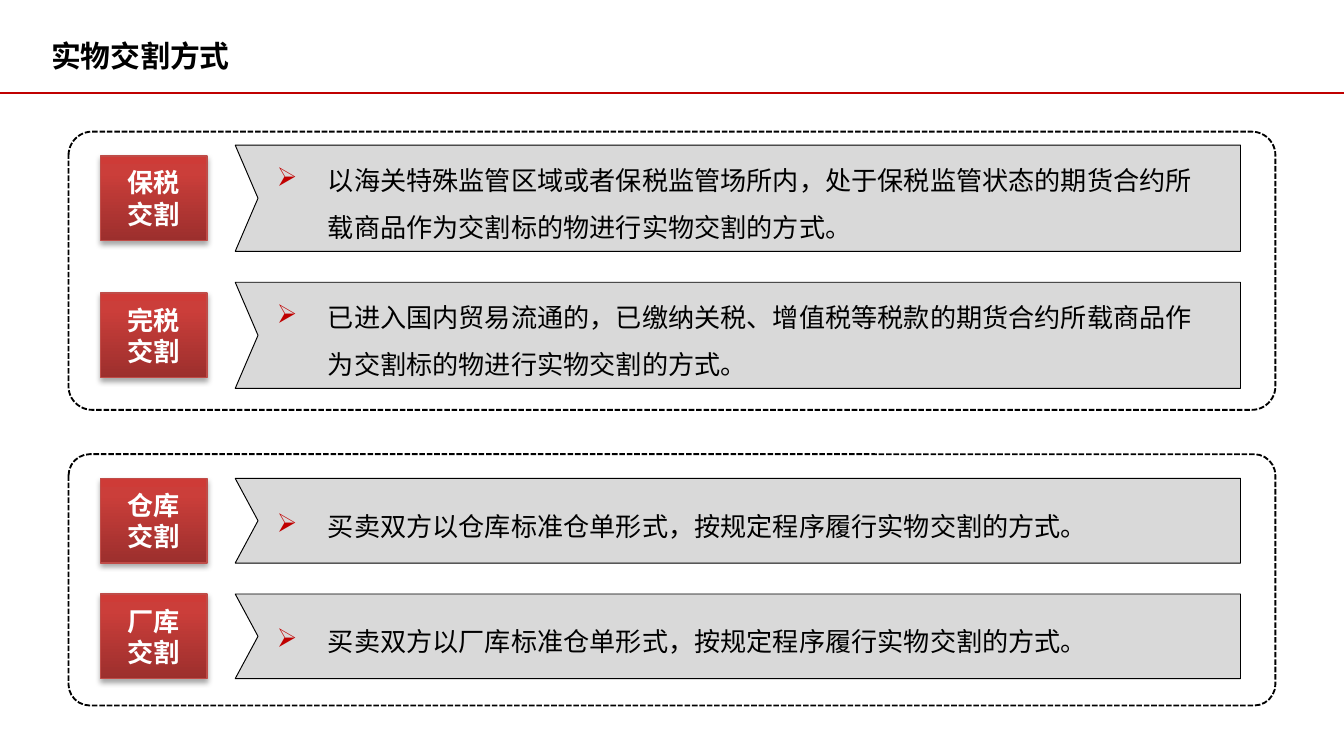
from collections import namedtuple
from copy import deepcopy

from lxml import etree
from pptx import Presentation
from pptx import util as u
from pptx.dml.color import RGBColor
from pptx.enum import dml, shapes, text
from pptx.oxml.ns import qn

Box = namedtuple("Box", "left top width height")

WIDTH = 10
HEIGHT = WIDTH * 9 / 16
FONT = "Noto Sans CJK SC"
BLACK = RGBColor(0, 0, 0)
WHITE = RGBColor(255, 255, 255)
RED = RGBColor(0xC0, 0, 0)
GREY = RGBColor(0xD9, 0xD9, 0xD9)
BADGE_EDGE = RGBColor(0xBF, 0x4C, 0x48)
BADGE_STOPS = [
    (0, RGBColor(0x9C, 0x2F, 0x2D)),
    (0.8, RGBColor(0xCB, 0x3E, 0x3A)),
    (1, RGBColor(0xCE, 0x3B, 0x37)),
]

# Columns inside a panel, as offsets from its left edge
BADGE_LEFT, BADGE_WIDTH = 0.24, 0.79
BANNER_LEFT, BANNER_WIDTH = 1.24, 7.48
BADGE_HEIGHT = 0.63
ROW_GAP = 0.23
NOTCH = 0.17

# Panel box, space above the first row, row height, rows
PANELS = [
    (Box(0.51, 0.98, 8.98, 2.07), 0.10, 0.79, [
        ("保税", "以海关特殊监管区域或者保税监管场所内，处于保税监管状态的期货合约所"
                 "载商品作为交割标的物进行实物交割的方式。"),
        ("完税", "已进入国内贸易流通的，已缴纳关税、增值税等税款的期货合约所载商品作"
                 "为交割标的物进行实物交割的方式。"),
    ]),
    (Box(0.51, 3.38, 8.98, 1.87), 0.18, 0.63, [
        ("仓库", "买卖双方以仓库标准仓单形式，按规定程序履行实物交割的方式。"),
        ("厂库", "买卖双方以厂库标准仓单形式，按规定程序履行实物交割的方式。"),
    ]),
]


def inches(box):
    return [u.Inches(length) for length in box]


def add_child(parent, tag, **attributes):
    return etree.SubElement(parent, qn(tag), attributes)


def format_runs(frame, size, color, bold=False):
    for paragraph in frame.paragraphs:
        for run in paragraph.runs:
            run.font.size = u.Pt(size)
            run.font.bold = bold
            run.font.name = FONT
            run.font.color.rgb = color
            add_child(run.font._element, "a:ea", typeface=FONT)


def outline(shape, color, width):
    shape.line.color.rgb = color
    shape.line.width = u.Pt(width)


def add_header(slide, box):
    title = slide.shapes.title
    title.left, title.top, title.width, title.height = inches(box)
    frame = title.text_frame
    frame.text = "实物交割方式"
    frame.vertical_anchor = text.MSO_ANCHOR.MIDDLE
    frame.paragraphs[0].alignment = text.PP_ALIGN.LEFT
    format_runs(frame, 16, BLACK, bold=True)

    rule_y = u.Inches(box.top + box.height)
    rule = slide.shapes.add_connector(
        shapes.MSO_CONNECTOR.STRAIGHT, 0, rule_y, u.Inches(WIDTH), rule_y)
    outline(rule, RED, 1)
    add_child(rule._element.spPr, "a:effectLst")


def fill_badge(badge):
    """Apply the three-stop vertical gradient and the soft shadow below."""
    badge.fill.gradient()
    badge.fill.gradient_angle = 90
    properties = badge._element.spPr
    stop_list = properties.find(qn("a:gradFill")).find(qn("a:gsLst"))
    stop_list.append(deepcopy(stop_list[-1]))
    for stop, (position, color) in zip(badge.fill.gradient_stops, BADGE_STOPS):
        stop.position = position
        stop.color.rgb = color

    badge.shadow.inherit = False
    shadow = add_child(
        properties.find(qn("a:effectLst")), "a:outerShdw",
        blurRad=str(u.Pt(3.1)), dist=str(u.Pt(1.8)), dir="5400000", rotWithShape="0")
    shadow_color = add_child(shadow, "a:srgbClr", val=str(BLACK))
    add_child(shadow_color, "a:alpha", val="35000")


def add_badge(slide, box, kind):
    badge = slide.shapes.add_shape(shapes.MSO_SHAPE.RECTANGLE, *inches(box))
    outline(badge, BADGE_EDGE, 0.75)
    fill_badge(badge)
    frame = badge.text_frame
    frame.text = f"{kind}\n交割"
    frame.vertical_anchor = text.MSO_ANCHOR.MIDDLE
    for paragraph in frame.paragraphs:
        paragraph.alignment = text.PP_ALIGN.CENTER
    format_runs(frame, 14, WHITE, bold=True)


def add_bullet(paragraph):
    properties = paragraph._p.get_or_add_pPr()
    properties.set("marL", str(u.Inches(0.38)))
    properties.set("indent", str(-u.Inches(0.38)))
    add_child(add_child(properties, "a:buClr"), "a:srgbClr", val=str(RED))
    add_child(properties, "a:buChar", char="➢")


def add_banner(slide, box, definition):
    """Add the notched grey banner that holds one definition."""
    right, bottom = box.left + box.width, box.top + box.height
    builder = slide.shapes.build_freeform(
        u.Inches(right), u.Inches(box.top))
    corners = [
        (box.left, box.top),
        (box.left + NOTCH, box.top + box.height / 2),
        (box.left, bottom),
        (right, bottom),
    ]
    builder.add_line_segments([inches(corner) for corner in corners], close=True)
    banner = builder.convert_to_shape()
    banner.shadow.inherit = False
    banner.fill.solid()
    banner.fill.fore_color.rgb = GREY
    outline(banner, BLACK, 0.5)

    frame = banner.text_frame
    frame.text = definition
    frame.word_wrap = True
    frame.vertical_anchor = text.MSO_ANCHOR.MIDDLE
    frame.margin_left = frame.margin_right = u.Inches(0.31)
    frame.margin_top, frame.margin_bottom = u.Inches(0.08), u.Inches(0.12)
    paragraph = frame.paragraphs[0]
    paragraph.alignment = text.PP_ALIGN.LEFT
    paragraph.line_spacing = 1.5
    add_bullet(paragraph)
    format_runs(frame, 14, BLACK)


def add_panel(slide, box, padding, row_height, rows):
    """Add a dashed panel with one badge and banner per row."""
    panel = slide.shapes.add_shape(shapes.MSO_SHAPE.ROUNDED_RECTANGLE, *inches(box))
    panel.adjustments[0] = 0.085
    panel.shadow.inherit = False
    panel.fill.solid()
    panel.fill.fore_color.rgb = WHITE
    outline(panel, BLACK, 1)
    panel.line.dash_style = dml.MSO_LINE.SQUARE_DOT

    for index, (kind, definition) in enumerate(rows):
        top = box.top + padding + index * (row_height + ROW_GAP)
        badge_top = top + (row_height - BADGE_HEIGHT) / 2
        add_badge(slide, Box(box.left + BADGE_LEFT, badge_top,
                             BADGE_WIDTH, BADGE_HEIGHT), kind)
        add_banner(slide, Box(box.left + BANNER_LEFT, top,
                              BANNER_WIDTH, row_height), definition)


def main():
    deck = Presentation()
    deck.slide_width, deck.slide_height = u.Inches(WIDTH), u.Inches(HEIGHT)
    title_only = deck.slide_layouts[5]
    slide = deck.slides.add_slide(title_only)
    add_header(slide, Box(0.28, 0.14, 9.37, 0.55))
    for panel in PANELS:
        add_panel(slide, *panel)
    deck.save("out.pptx")


if __name__ == "__main__":
    main()
